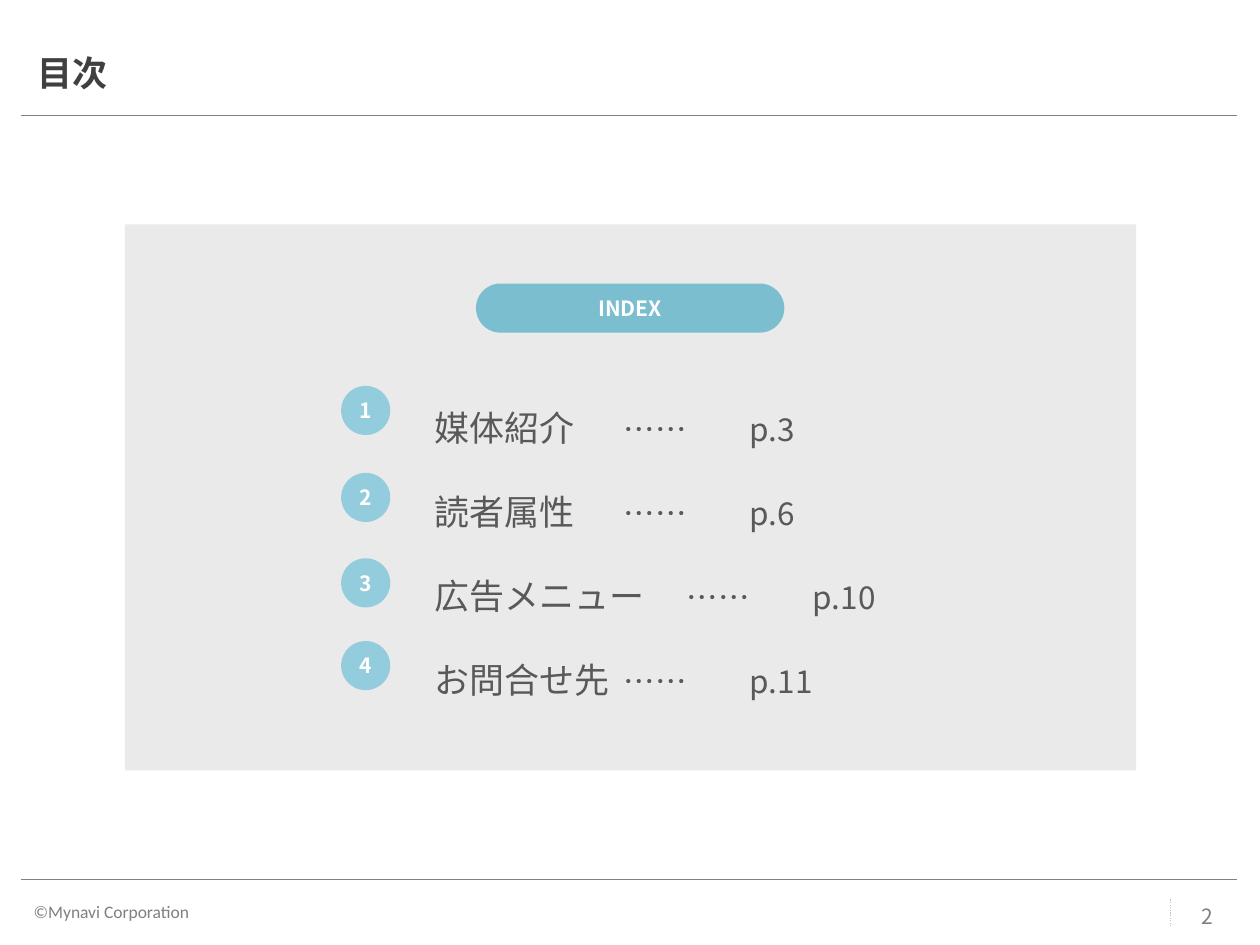
import pptx
import pptx.dml.color
import pptx.enum.dml
import pptx.enum.shapes
import pptx.enum.text
import pptx.oxml
import pptx.oxml.ns
import pptx.util

Pt = pptx.util.Pt
SHAPE = pptx.enum.shapes.MSO_SHAPE
ALIGN = pptx.enum.text.PP_ALIGN
ANCHOR = pptx.enum.text.MSO_ANCHOR
qn = pptx.oxml.ns.qn

GREY, PALE_BLUE, TEAL = "808080", "93CDDD", "4BACC6"
ENTRIES = [("媒体紹介", "p.3"), ("読者属性", "p.6"),
           ("広告メニュー", "p.10"), ("お問合せ先", "p.11")]
BADGE_TOPS = [220.5, 270.2, 319, 366.3]


def rgb(value):
    return pptx.dml.color.RGBColor.from_string(value)


def add_text(p, text, size=12, color="FFFFFF", bold=False, font="Noto Sans CJK JP"):
    r = p.add_run()
    r.text = text
    r.font.size, r.font.bold, r.font.name = Pt(size), bold, font
    r.font.color.rgb = rgb(color)
    ea = pptx.oxml.parse_xml(f'<a:ea {pptx.oxml.ns.nsdecls("a")} typeface="{font}"/>')
    r.font._element.find(qn("a:latin")).addnext(ea)


class Page:
    """Style and current slide, with one method for each kind of element."""

    def __init__(self, slide):
        self.s = slide

    def line(self, x1, y1, x2, y2, color=GREY, dash=None):
        c = self.s.shapes.add_connector(
            pptx.enum.shapes.MSO_CONNECTOR.STRAIGHT, Pt(x1), Pt(y1), Pt(x2), Pt(y2))
        c.line.color.rgb = rgb(color)
        c.line.width = Pt(0.75)
        if dash:
            c.line.dash_style = dash
        c._element.spPr.append(c._element.spPr.makeelement(qn("a:effectLst"), {}))

    def shape(self, kind, box, fill, text=None, alpha=None):
        sp = self.s.shapes.add_shape(kind, *map(Pt, box))
        sp.shadow.inherit = False
        sp.line.fill.background()
        sp.fill.solid()
        sp.fill.fore_color.rgb = rgb(fill)
        if alpha:
            clr = sp._element.spPr.find(qn("a:solidFill"))[0]
            clr.append(clr.makeelement(qn("a:alpha"), {"val": str(alpha * 1000)}))
        if text:
            tf = sp.text_frame
            tf.word_wrap = False
            tf.vertical_anchor = ANCHOR.MIDDLE
            tf.paragraphs[0].alignment = ALIGN.CENTER
            add_text(tf.paragraphs[0], text, bold=True)
        return sp

    def label(self, box, text, align=ALIGN.LEFT, anchor=ANCHOR.TOP, **style):
        tf = self.s.shapes.add_textbox(*map(Pt, box)).text_frame
        tf.word_wrap = True
        tf.vertical_anchor = anchor
        tf.paragraphs[0].alignment = align
        add_text(tf.paragraphs[0], text, **style)

    def placeholder(self, sp, box):
        """Move a placeholder to box, in front of the shapes drawn so far."""
        sp.left, sp.top, sp.width, sp.height = map(Pt, box)
        self.s.shapes._spTree.append(sp._element)
        tf = sp.text_frame
        tf.word_wrap = True
        tf.auto_size = pptx.enum.text.MSO_AUTO_SIZE.NONE
        tf.vertical_anchor = ANCHOR.TOP
        return tf

    def title(self, box, text):
        p = self.placeholder(self.s.shapes.title, box).paragraphs[0]
        p.alignment = ALIGN.LEFT
        add_text(p, text, size=20, color="404040", bold=True)

    def contents(self, box, entries, tabs):
        tf = self.placeholder(self.s.placeholders[1], box)
        for i, (name, page) in enumerate(entries):
            p = tf.add_paragraph() if i else tf.paragraphs[0]
            pPr = p._p.get_or_add_pPr()
            pPr.set("marL", "0")
            pPr.set("indent", "0")
            pPr.append(pPr.makeelement(qn("a:buNone"), {}))
            tab_list = pPr.makeelement(qn("a:tabLst"), {})
            for pos in tabs:
                tab_list.append(pPr.makeelement(
                    qn("a:tab"), {"pos": str(Pt(pos)), "algn": "l"}))
            pPr.append(tab_list)
            p.line_spacing = 2.0
            p.space_before = Pt(0)
            add_text(p, name, size=20, color="595959")
            add_text(p, f"\t……\t{page}", size=18, color="595959")


def main():
    prs = pptx.Presentation()
    prs.slide_width, prs.slide_height = Pt(720), Pt(540)
    page = Page(prs.slides.add_slide(prs.slide_layouts[1]))

    for y in (66, 502.5):
        page.line(12, y, 707, y)
    page.label((12.2, 511.2, 345.6, 19.4), "©Mynavi Corporation",
               size=10, color=GREY, font="Calibri")
    page.line(669, 514, 669, 529, "BFBFBF", pptx.enum.dml.MSO_LINE.ROUND_DOT)
    page.label((671, 509, 38.2, 28.8), "2", ALIGN.CENTER, ANCHOR.MIDDLE, color=GREY)

    page.shape(SHAPE.RECTANGLE, (71.3, 128.2, 578, 312), "EAEAEA")
    page.title((14.4, 26, 306, 31.5), "目次")
    index = page.shape(SHAPE.ROUNDED_RECTANGLE, (272, 162, 176.2, 28.1),
                       TEAL, "INDEX", alpha=70)
    index.adjustments[0] = 0.5
    page.contents((241.2, 204.5, 340, 201), ENTRIES, tabs=(140, 194))
    for number, top in enumerate(BADGE_TOPS, 1):
        page.shape(SHAPE.OVAL, (194.9, top, 28.1, 28.1), PALE_BLUE, str(number))

    prs.save("out.pptx")


if __name__ == "__main__":
    main()
